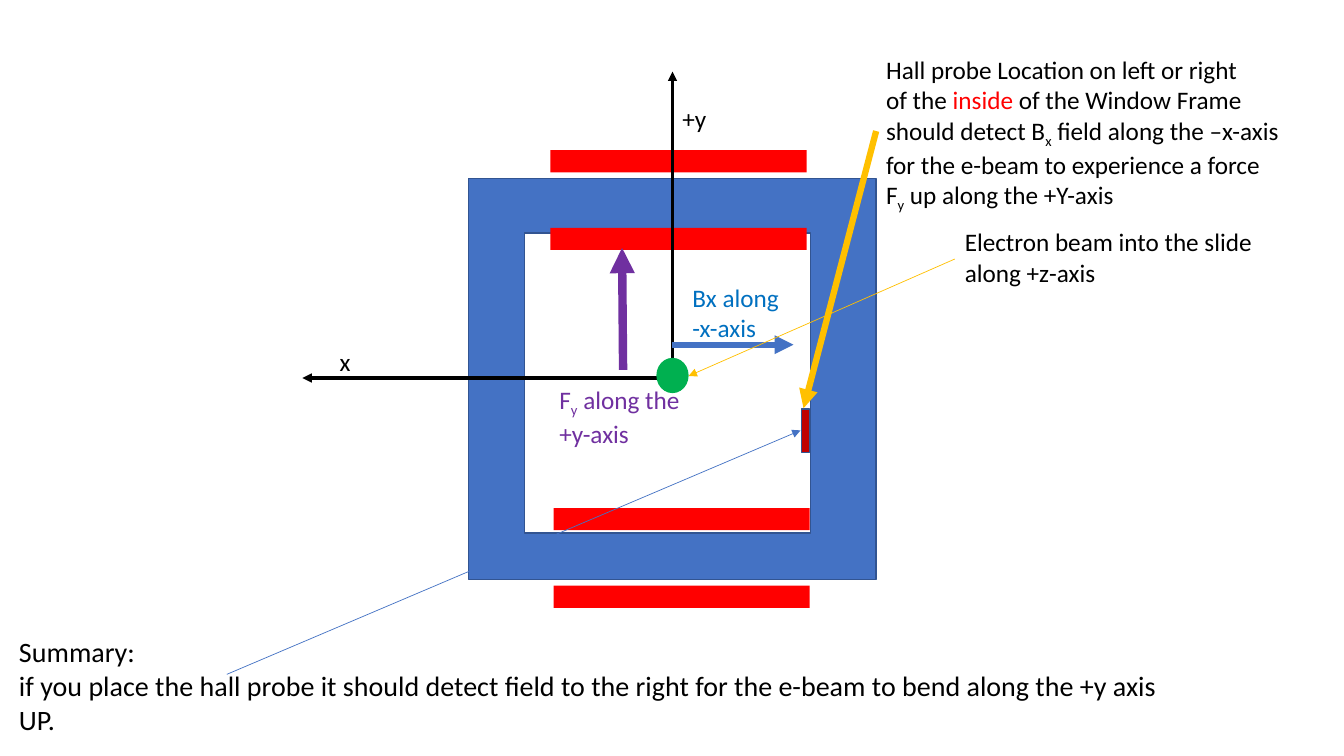
from lxml.etree import SubElement
from pptx import Presentation
from pptx.dml.color import RGBColor
from pptx.enum.shapes import MSO_CONNECTOR, MSO_SHAPE
from pptx.enum.text import MSO_AUTO_SIZE
from pptx.oxml.ns import qn
from pptx.util import Emu, Pt

EMU_PER_PX = 9144  # 100 px to the inch
FONT = "Calibri"
COLORS = {
    "black": "000000",
    "white": "FFFFFF",
    "frame": "4472C4",
    "outline": "325491",
    "coil": "FF0000",
    "beam": "00B050",
    "probe": "C00000",
    "field": "0070C0",
    "force": "7030A0",
    "pointer": "FFC000",
}


def px(value):
    return Emu(value * EMU_PER_PX)


def color(name):
    return RGBColor.from_string(COLORS[name])


def add_block(page, kind, left, top, width, height, fill, outline=None):
    block = page.shapes.add_shape(kind, px(left), px(top), px(width), px(height))
    block.shadow.inherit = False
    block.fill.solid()
    block.fill.fore_color.rgb = color(fill)
    if outline:
        block.line.color.rgb = color(outline)
        block.line.width = Pt(1)
    else:
        block.line.fill.background()


def add_arrow(page, start, end, stroke, weight):
    arrow = page.shapes.add_connector(
        MSO_CONNECTOR.STRAIGHT, *[px(value) for value in (*start, *end)])
    arrow.line.color.rgb = color(stroke)
    arrow.line.width = Pt(weight)
    SubElement(arrow.line._get_or_add_ln(), qn("a:tailEnd"), type="triangle")
    SubElement(arrow._element.spPr, qn("a:effectLst"))


def add_text(page, left, top, width, height, lines, ink="black", size=18, wrap=False):
    """Each line is a list of spans: plain text, or (text, "sub" or a colour name)."""
    box = page.shapes.add_textbox(px(left), px(top), px(width), px(height))
    frame = box.text_frame
    frame.word_wrap = wrap
    frame.auto_size = MSO_AUTO_SIZE.SHAPE_TO_FIT_TEXT
    for index, spans in enumerate(lines):
        para = frame.paragraphs[0] if index == 0 else frame.add_paragraph()
        para.font.name = FONT
        para.font.size = Pt(size)
        para.font.color.rgb = color(ink)
        for item in spans:
            text, style = item if isinstance(item, tuple) else (item, None)
            span = para.add_run()
            span.text = text
            if style == "sub":
                span.font._element.set("baseline", "-25000")
            elif style:
                span.font.color.rgb = color(style)


def main():
    deck = Presentation()
    deck.slide_width, deck.slide_height = px(1333), px(750)
    page = deck.slides.add_slide(deck.slide_layouts[6])

    # Window frame and its opening
    add_block(page, MSO_SHAPE.RECTANGLE, 465, 177, 404, 398, "frame", "outline")
    add_block(page, MSO_SHAPE.RECTANGLE, 520, 231, 284, 298, "white", "outline")

    # Coil pairs, below and above
    for left, first_top in ((549, 504), (546, 149)):
        for top in (first_top, first_top + 77):
            add_block(page, MSO_SHAPE.RECTANGLE, left, top, 254, 22, "coil")

    # Axes
    origin = (667, 375)
    add_arrow(page, origin, (300, 375), "black", 2.25)
    add_text(page, 327, 339, 31, 40, [["x"]])
    add_arrow(page, origin, (667, 71), "black", 2.25)
    add_text(page, 667, 98, 52, 40, [["+y"]], wrap=True)

    # Electron beam
    add_block(page, MSO_SHAPE.OVAL, 651, 355, 32, 35, "beam")
    add_text(page, 947, 220, 308, 71,
             [["Electron beam into the slide"], ["along +z-axis"]])

    # Magnetic field
    add_arrow(page, (667, 342), (787, 342), "frame", 4.5)
    add_text(page, 677, 275, 107, 71, [["Bx along"], ["-x-axis"]], "field")

    # Hall probe and beam pointer
    add_block(page, MSO_SHAPE.RECTANGLE, 795, 406, 8, 43, "probe", "outline")
    add_arrow(page, (947, 257), (683, 373), "pointer", 0.5)

    # Force on the beam
    add_arrow(page, (618, 367), (617, 246), "force", 6)
    add_text(page, 545, 376, 147, 71,
             [["F", ("y", "sub"), " along the"], ["+y-axis"]], "force")

    # Hall probe note
    add_text(page, 869, 49, 416, 162, [
        ["Hall probe Location on left or right"],
        ["of the ", ("inside", "coil"), " of the Window Frame"],
        ["should detect B", ("x", "sub"), " field along the –x-axis"],
        ["for the e-beam to experience a force"],
        ["F", ("y", "sub"), " up along the +Y-axis"],
    ])
    add_arrow(page, (869, 130), (797, 405), "pointer", 4.5)

    # Summary
    add_text(page, 9, 625, 1190, 77, [
        ["Summary:"],
        ["if you place the hall probe it should detect field to the right "
         "for the e-beam to bend along the +y axis UP."],
    ], size=20, wrap=True)
    add_arrow(page, (225, 669), (794, 427), "frame", 0.5)

    deck.save("out.pptx")


if __name__ == "__main__":
    main()
